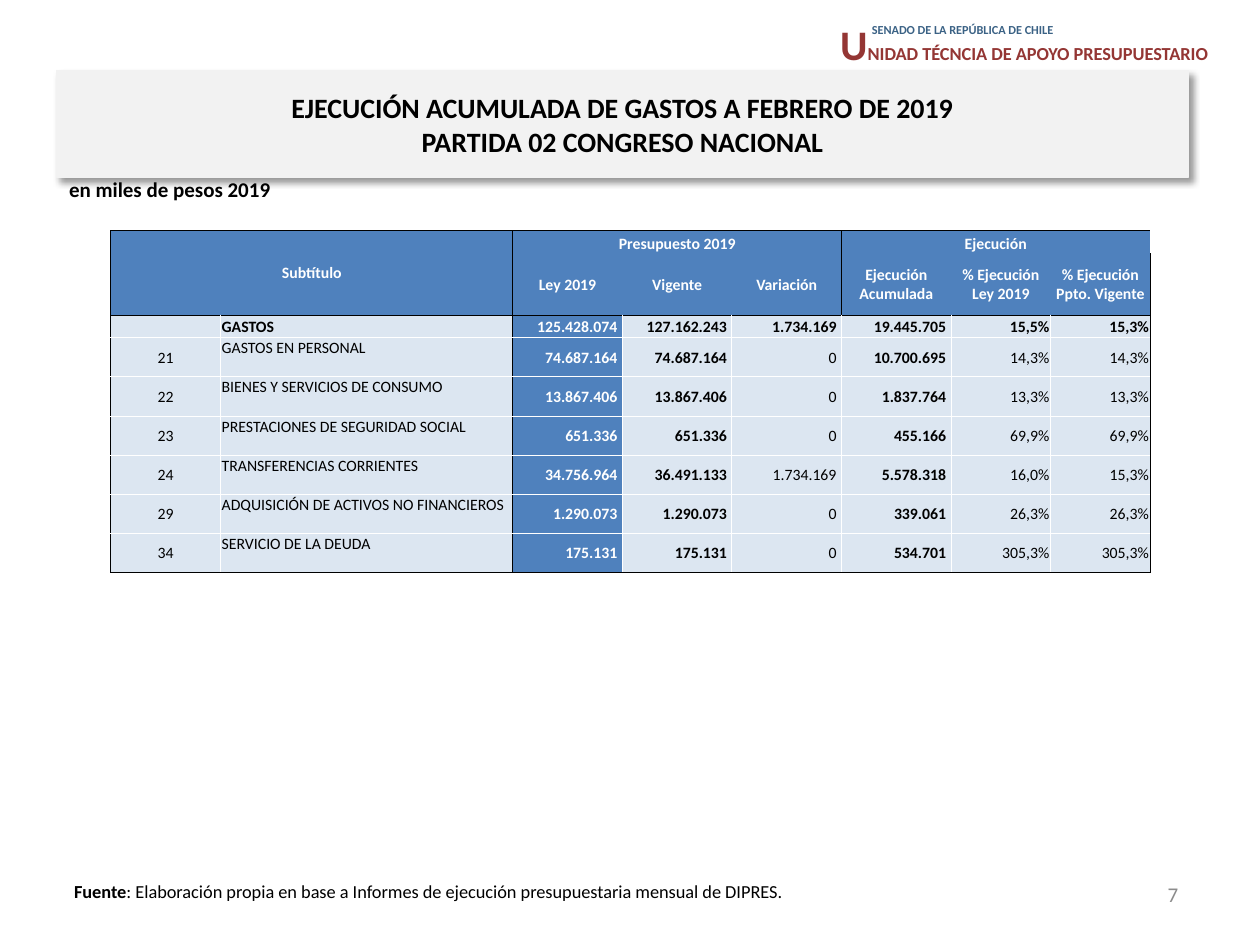
from lxml.etree import SubElement
from pptx import Presentation
from pptx.dml.color import RGBColor
from pptx.enum.shapes import MSO_SHAPE
from pptx.enum.text import MSO_ANCHOR, PP_ALIGN
from pptx.oxml.ns import qn
from pptx.util import Inches, Pt

COLUMNS, ROWS = 100, 75
UNIT = Inches(0.1)
FONT = "Calibri"
BLACK = RGBColor(0x00, 0x00, 0x00)
WHITE = RGBColor(0xFF, 0xFF, 0xFF)
BLUE = RGBColor(0x4F, 0x81, 0xBD)
PALE_BLUE = RGBColor(0xDC, 0xE6, 0xF1)
PALE_GRAY = RGBColor(0xF2, 0xF2, 0xF2)
GRAY = RGBColor(0x8C, 0x8C, 0x8C)
SENATE_BLUE = RGBColor(0x3B, 0x62, 0x85)
DARK_RED = RGBColor(0x94, 0x36, 0x34)

COLUMN_WIDTHS = [8.7, 23.2, 8.7, 8.7, 8.7, 8.7, 7.9, 7.9]
ROW_HEIGHTS = [1.8, 4.9, 1.8] + [3.11] * 6
HEADER_ROWS = 2
LAW_COLUMN, EXECUTION_COLUMN, PERCENT_COLUMN = 2, 5, 6
TABLE_ROWS = [
    ["Subtítulo", "", "Presupuesto 2019", "", "", "Ejecución", "", ""],
    ["", "", "Ley 2019", "Vigente", "Variación", "Ejecución Acumulada",
     "% Ejecución Ley 2019", "% Ejecución Ppto. Vigente"],
    ["", "GASTOS", "125.428.074", "127.162.243", "1.734.169", "19.445.705", "15,5%", "15,3%"],
    ["21", "GASTOS EN PERSONAL", "74.687.164", "74.687.164", "0", "10.700.695", "14,3%", "14,3%"],
    ["22", "BIENES Y SERVICIOS DE CONSUMO", "13.867.406", "13.867.406", "0", "1.837.764",
     "13,3%", "13,3%"],
    ["23", "PRESTACIONES DE SEGURIDAD SOCIAL", "651.336", "651.336", "0", "455.166",
     "69,9%", "69,9%"],
    ["24", "TRANSFERENCIAS CORRIENTES", "34.756.964", "36.491.133", "1.734.169", "5.578.318",
     "16,0%", "15,3%"],
    ["29", "ADQUISICIÓN DE ACTIVOS NO FINANCIEROS", "1.290.073", "1.290.073", "0", "339.061",
     "26,3%", "26,3%"],
    ["34", "SERVICIO DE LA DEUDA", "175.131", "175.131", "0", "534.701", "305,3%", "305,3%"],
]


def grid(*lengths):
    """Turn grid columns and rows into slide lengths."""
    return [round(length * UNIT) for length in lengths]


def write(paragraph, text, size=9, color=BLACK, bold=False, align=PP_ALIGN.LEFT):
    """Add text to a paragraph in the given format, breaking at newlines."""
    paragraph.alignment = align
    for index, line in enumerate(text.split("\n")):
        if index:
            paragraph.add_line_break()
        run = paragraph.add_run()
        run.text = line
        run.font.name = FONT
        run.font.size = Pt(size)
        run.font.bold = bold
        run.font.color.rgb = color


def add_text(slide, place, *pieces, indent=1, anchor=MSO_ANCHOR.TOP):
    """Add a one-paragraph text box made of (text, format) pieces."""
    frame = slide.shapes.add_textbox(*grid(*place)).text_frame
    frame.word_wrap = True
    frame.vertical_anchor = anchor
    frame.margin_left, = grid(indent)
    for text, style in pieces:
        write(frame.paragraphs[0], text, **style)


def add_title(slide, place, text):
    """Add the title panel with its soft shadow."""
    panel = slide.shapes.add_shape(MSO_SHAPE.RECTANGLE, *grid(*place))
    panel.fill.solid()
    panel.fill.fore_color.rgb = PALE_GRAY
    panel.line.color.rgb = PALE_GRAY
    panel.line.width = Pt(0.75)
    panel.shadow.inherit = False
    effects = panel.element.spPr.find(qn("a:effectLst"))
    shadow = SubElement(effects, qn("a:outerShdw"), blurRad=str(Pt(4)), dist=str(Pt(3)),
                        dir=str(45 * 60000), algn="tl", rotWithShape="0")
    color = SubElement(shadow, qn("a:srgbClr"), val=str(BLACK))
    SubElement(color, qn("a:alpha"), val="40000")
    panel.text_frame.word_wrap = True
    panel.text_frame.vertical_anchor = MSO_ANCHOR.MIDDLE
    write(panel.text_frame.paragraphs[0], text, size=16, bold=True, align=PP_ALIGN.CENTER)


def vertical_border(row, edge):
    """Give the colour of the vertical rule at a column edge, if any."""
    if edge in (0, LAW_COLUMN, len(COLUMN_WIDTHS)):
        return BLACK
    if row < HEADER_ROWS:
        return BLACK if edge == EXECUTION_COLUMN else None
    return WHITE


def horizontal_border(edge):
    """Give the colour of the horizontal rule at a row edge, if any."""
    if edge in (0, HEADER_ROWS, len(ROW_HEIGHTS)):
        return BLACK
    return WHITE if edge > HEADER_ROWS else None


def set_borders(cell, row, column):
    """Draw the four borders of a table cell."""
    borders = {"L": vertical_border(row, column), "R": vertical_border(row, column + 1),
               "T": horizontal_border(row), "B": horizontal_border(row + 1)}
    properties = cell._tc.get_or_add_tcPr()
    for side, color in borders.items():
        line = SubElement(properties, qn(f"a:ln{side}"), w=str(Pt(0.5)))
        if color is None:
            SubElement(line, qn("a:noFill"))
        else:
            fill = SubElement(line, qn("a:solidFill"))
            SubElement(fill, qn("a:srgbClr"), val=str(color))


def cell_style(row, column):
    """Give the text format of a table cell."""
    if row < HEADER_ROWS:
        return {"color": WHITE, "bold": True, "align": PP_ALIGN.CENTER}
    align = {0: PP_ALIGN.CENTER, 1: PP_ALIGN.JUSTIFY}.get(column, PP_ALIGN.RIGHT)
    strong = row == HEADER_ROWS or column in (LAW_COLUMN, LAW_COLUMN + 1, EXECUTION_COLUMN)
    return {"color": WHITE if column == LAW_COLUMN else BLACK, "bold": strong, "align": align}


def cell_anchor(row, column):
    """Give the vertical place of the text in a table cell."""
    if row == 0 and column >= LAW_COLUMN:
        return MSO_ANCHOR.BOTTOM
    if row > HEADER_ROWS and column == 1:
        return MSO_ANCHOR.TOP
    return MSO_ANCHOR.MIDDLE


def fill_cell(cell, row, column, text):
    """Format one table cell and write its text."""
    is_amount = row >= HEADER_ROWS and LAW_COLUMN <= column < PERCENT_COLUMN
    cell.margin_left, cell.margin_right, cell.margin_top, cell.margin_bottom = grid(
        0.1, 0.4 if is_amount else 0.1, 0.1, 0)
    cell.vertical_anchor = cell_anchor(row, column)
    set_borders(cell, row, column)
    cell.fill.solid()
    cell.fill.fore_color.rgb = BLUE if row < HEADER_ROWS or column == LAW_COLUMN else PALE_BLUE
    paragraph = cell.text_frame.paragraphs[0]
    if text:
        write(paragraph, text, **cell_style(row, column))
    else:
        SubElement(paragraph._p, qn("a:endParaRPr"), sz="900")


def add_budget_table(slide, left, top):
    """Add the table of budget and execution by subtitle."""
    place = grid(left, top, sum(COLUMN_WIDTHS), sum(ROW_HEIGHTS))
    table = slide.shapes.add_table(len(ROW_HEIGHTS), len(COLUMN_WIDTHS), *place).table
    table.first_row = table.horz_banding = False
    for column, width in zip(table.columns, grid(*COLUMN_WIDTHS)):
        column.width = width
    for row, height in zip(table.rows, grid(*ROW_HEIGHTS)):
        row.height = height
    for row, texts in enumerate(TABLE_ROWS):
        for column, text in enumerate(texts):
            fill_cell(table.cell(row, column), row, column, text)
    table.cell(0, 0).merge(table.cell(1, 1))
    for first in (LAW_COLUMN, EXECUTION_COLUMN):
        table.cell(0, first).merge(table.cell(0, first + 2))


def main():
    """Build the slide and save it."""
    presentation = Presentation()
    presentation.slide_width, presentation.slide_height = grid(COLUMNS, ROWS)
    slide = presentation.slides.add_slide(presentation.slide_layouts[6])
    add_text(slide, (67.3, 1.3, 23.9, 1.8),
             ("SENADO DE LA REPÚBLICA DE CHILE", {"size": 7, "color": SENATE_BLUE, "bold": True}),
             indent=1.9)
    add_text(slide, (65.7, 1, 33.9, 5),
             ("U", {"size": 24, "color": DARK_RED, "bold": True}),
             ("NIDAD TÉCNCIA DE APOYO PRESUPUESTARIO",
              {"size": 10.5, "color": DARK_RED, "bold": True}))
    add_text(slide, (71.2, 69, 23.3, 4),
             ("7", {"size": 12, "color": GRAY, "align": PP_ALIGN.RIGHT}),
             anchor=MSO_ANCHOR.MIDDLE)
    add_text(slide, (4.5, 13.5, 90, 4.3), ("en miles de pesos 2019", {"size": 12, "bold": True}))
    add_title(slide, (4.5, 5.6, 89.8, 8.5),
              "EJECUCIÓN ACUMULADA DE GASTOS A FEBRERO DE 2019\nPARTIDA 02 CONGRESO NACIONAL")
    add_text(slide, (4.9, 69.4, 90, 4),
             ("Fuente", {"size": 10.5, "bold": True}),
             (": Elaboración propia en base a Informes de ejecución presupuestaria mensual de DIPRES.",
              {"size": 10.5}))
    add_budget_table(slide, 8.8, 18.3)
    presentation.save("out.pptx")


if __name__ == "__main__":
    main()
